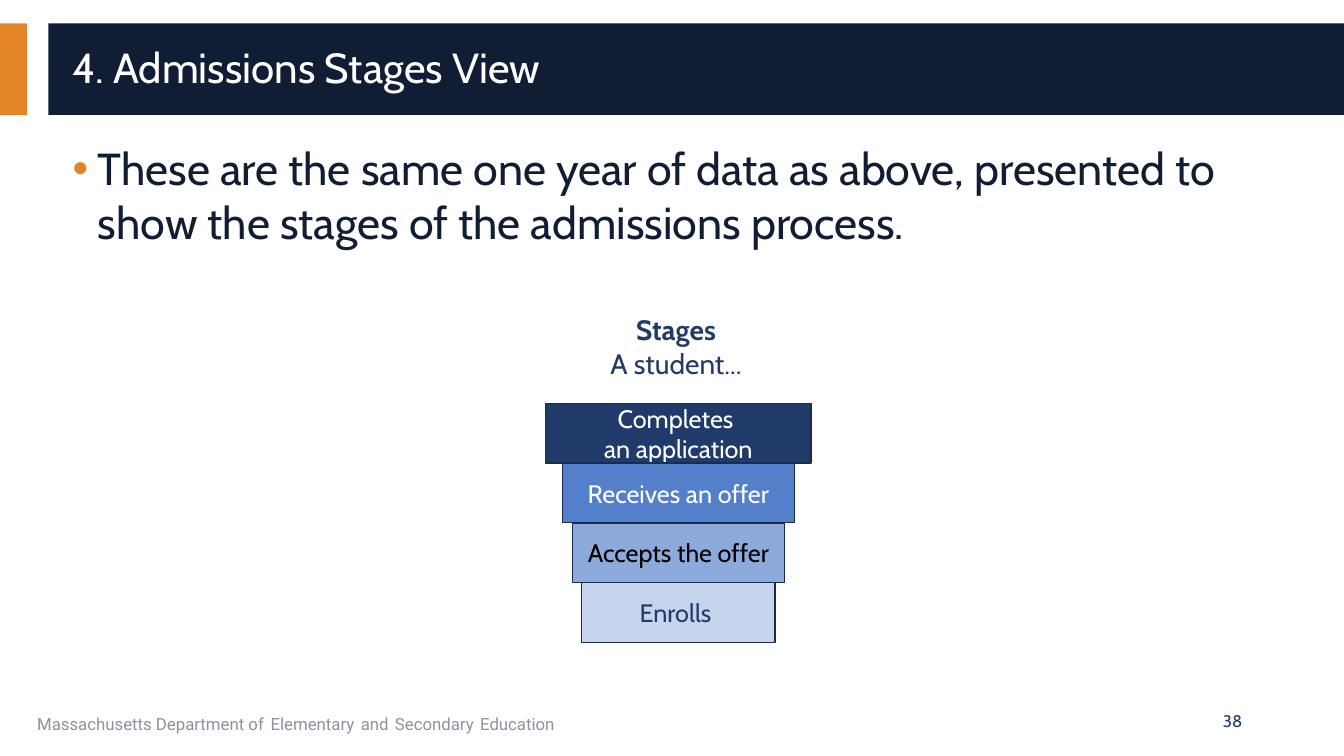
import dataclasses

import lxml.etree
import pptx
import pptx.dml.color
import pptx.enum.shapes
import pptx.enum.text
import pptx.oxml.ns
import pptx.util

ALIGN = pptx.enum.text.PP_ALIGN
ANCHOR = pptx.enum.text.MSO_ANCHOR


@dataclasses.dataclass(frozen=True)
class Theme:
    navy: str = "101D35"
    blue: str = "203B6A"
    outline: str = "182C4E"
    orange: str = "E38526"
    gray: str = "8D92A1"
    white: str = "FFFFFF"
    black: str = "000000"
    middle: str = "547FCB"
    light: str = "8DAADC"
    pale: str = "C6D4EE"
    font: str = "Cabin"
    footer_font: str = "Roboto"
    title_size: int = 30
    body_size: int = 32
    heading_size: int = 20
    stage_size: int = 18
    footer_size: int = 12


@dataclasses.dataclass(frozen=True)
class Box:
    left: float
    top: float
    width: float
    height: float

    def place(self, shape):
        shape.left, shape.top, shape.width, shape.height = self.emu()

    def emu(self):
        return [pptx.util.Inches(n) for n in dataclasses.astuple(self)]

    def share(self, left, top, width, height):
        return Box(self.left + left * self.width, self.top + top * self.height,
                   width * self.width, height * self.height)


THEME = Theme()
PAGE = Box(0, 0, 13.33, 7.5)


def rgb(color):
    return pptx.dml.color.RGBColor.from_string(color)


def write(frame, lines, size=18, color=THEME.blue, font=THEME.font,
          align=ALIGN.LEFT, anchor=ANCHOR.MIDDLE, spacing=1.0, before=0):
    frame.word_wrap = True
    frame.auto_size = pptx.enum.text.MSO_AUTO_SIZE.NONE
    frame.vertical_anchor = anchor
    for index, spans in enumerate(lines):
        para = frame.add_paragraph() if index else frame.paragraphs[0]
        para.alignment = align
        para.line_spacing = spacing
        para.space_before = pptx.util.Pt(before)
        for text, changes in spans:
            span = para.add_run()
            span.text = text
            span.font.name = font
            span.font.size = pptx.util.Pt(changes.get("size", size))
            span.font.bold = changes.get("bold", False)
            span.font.color.rgb = rgb(changes.get("color", color))


def add_block(page, box, fill, line=None):
    block = page.shapes.add_shape(pptx.enum.shapes.MSO_SHAPE.RECTANGLE, *box.emu())
    block.shadow.inherit = False
    block.fill.solid()
    block.fill.fore_color.rgb = rgb(fill)
    if line:
        block.line.color.rgb = rgb(line)
        block.line.width = pptx.util.Pt(1)
    else:
        block.line.fill.background()
    return block


def add_text(page, box, lines, **style):
    write(page.shapes.add_textbox(*box.emu()).text_frame, lines, **style)


def set_bullet(para, indent, color):
    props = para._p.get_or_add_pPr()
    props.set("marL", str(pptx.util.Inches(indent)))
    props.set("indent", str(-pptx.util.Inches(indent)))
    qn = pptx.oxml.ns.qn
    holder = lxml.etree.SubElement(props, qn("a:buClr"))
    lxml.etree.SubElement(holder, qn("a:srgbClr"), val=color)
    lxml.etree.SubElement(props, qn("a:buFont"), typeface="Arial")
    lxml.etree.SubElement(props, qn("a:buChar"), char="•")


def build_header(page, box, text):
    add_block(page, box.share(0, 0, 0.02, 1), THEME.orange)
    add_block(page, box.share(0.036, 0, 0.964, 1), THEME.navy)
    title = page.shapes.title
    box.share(0.0465, 0.1, 0.933, 0.81).place(title)
    write(title.text_frame, [[(text, {})]], size=THEME.title_size,
          color=THEME.white, spacing=0.9)
    page.shapes._spTree.append(title._element)


def build_body(page, box, text):
    body = page.placeholders[1]
    box.place(body)
    write(body.text_frame, [[(text, {})]], size=THEME.body_size,
          color=THEME.navy, anchor=ANCHOR.TOP, before=10)
    set_bullet(body.text_frame.paragraphs[0], 0.25, THEME.orange)


def build_stages(page, box):
    add_text(page, box.share(0, 0, 1, 0.3),
             [[("Stages", {"bold": True})], [("A student...", {})]],
             size=THEME.heading_size, align=ALIGN.CENTER)
    stages = [
        (["Completes ", "an application"], 0.904, THEME.blue, THEME.white),
        (["Receives an offer"], 0.79, THEME.middle, THEME.white),
        (["Accepts the offer"], 0.722, THEME.light, THEME.black),
        (["Enrolls "], 0.66, THEME.pale, THEME.blue),
    ]
    top, height = 0.313, 0.172
    for row, (lines, width, fill, color) in enumerate(stages):
        place = box.share(0.508 - width / 2, top + row * height, width, height)
        block = add_block(page, place, fill, THEME.outline)
        write(block.text_frame, [[(line, {})] for line in lines],
              size=THEME.stage_size, color=color, align=ALIGN.CENTER)


def build_footer(page, box, name, number):
    first, *rest = name
    spans = [(first, {})]
    for word in rest:
        spans += [(" ", {"size": THEME.stage_size}), (word, {})]
    add_text(page, box.share(0, 0, 0.695, 1), [spans], size=THEME.footer_size,
             color=THEME.gray, font=THEME.footer_font, anchor=ANCHOR.TOP)
    add_text(page, box.share(0.753, 0, 0.247, 1), [[(number, {})]],
             size=THEME.footer_size, align=ALIGN.RIGHT)


def main():
    deck = pptx.Presentation()
    deck.slide_width = pptx.util.Inches(PAGE.width)
    deck.slide_height = pptx.util.Inches(PAGE.height)
    page = deck.slides.add_slide(deck.slide_layouts[1])
    build_header(page, PAGE.share(0, 0.031, 1, 0.121), "4. Admissions Stages View")
    build_body(page, Box(0.62, 1.35, 12.02, 5.52),
               "These are the same one year of data as above, presented to "
               "show the stages of the admissions process.")
    build_stages(page, Box(5.25, 2.92, 2.91, 3.45))
    build_footer(page, Box(0.27, 6.95, 12.15, 0.4),
                 ["Massachusetts Department of", "Elementary", "and",
                  "Secondary", "Education"], "38")
    deck.save("out.pptx")


if __name__ == "__main__":
    main()
